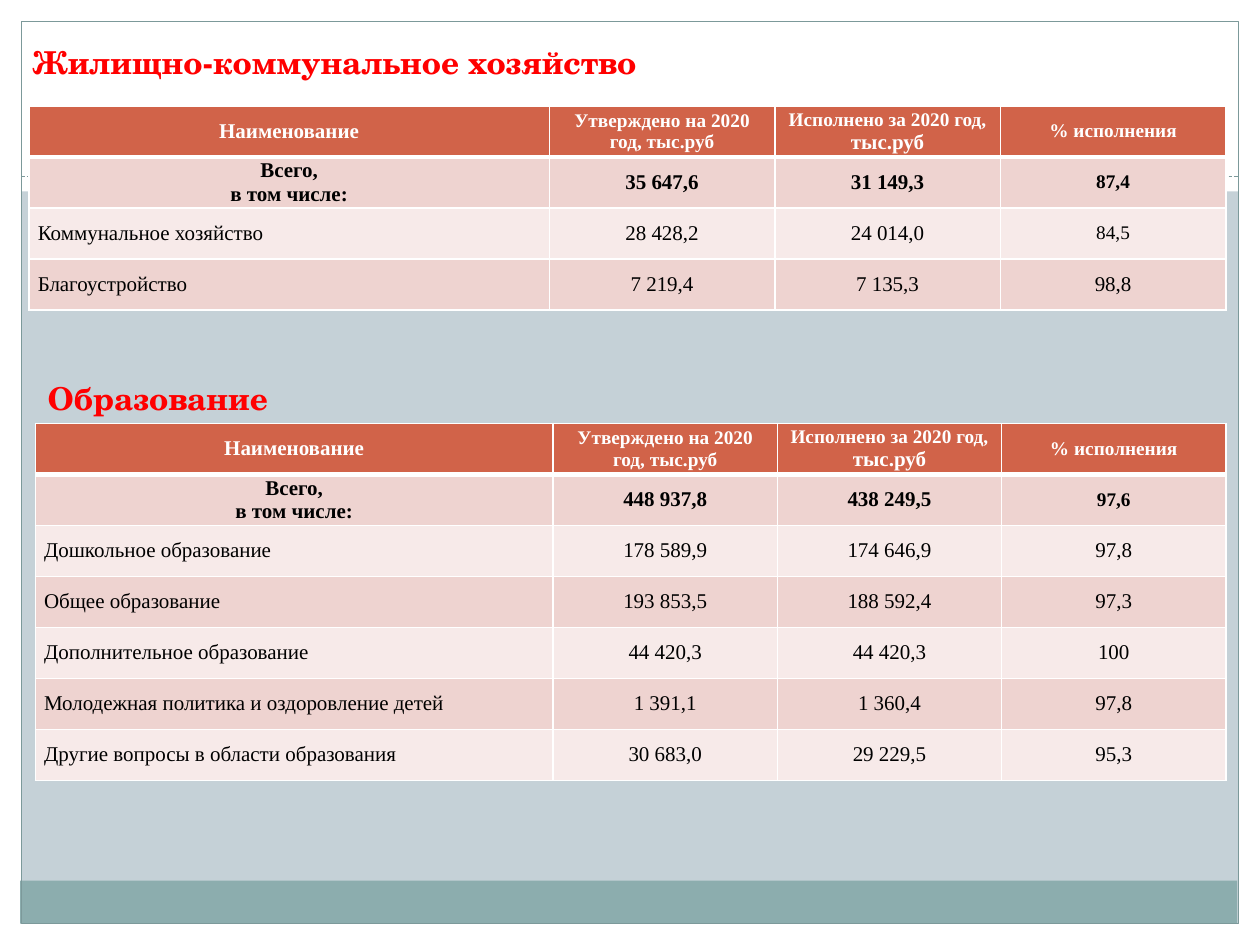
from lxml import etree
from pptx import Presentation
from pptx.dml.color import RGBColor
from pptx.enum.dml import MSO_LINE
from pptx.enum.shapes import MSO_CONNECTOR, MSO_SHAPE
from pptx.enum.text import MSO_ANCHOR, MSO_AUTO_SIZE, PP_ALIGN
from pptx.oxml.ns import qn
from pptx.util import Inches, Pt

RECT = MSO_SHAPE.RECTANGLE
CENTER, JUSTIFY = PP_ALIGN.CENTER, PP_ALIGN.JUSTIFY
MIDDLE = MSO_ANCHOR.MIDDLE

WHITE, BLACK, RED = "FFFFFF", "000000", "FF0000"
BACKGROUND, FOOTER, FRAME = "C5D1D7", "8CADAE", "7C999A"
HEADER_FILL, BAND_FILLS = "D16349", ("EED3D0", "F7EAE9")
TITLE_FONT, TABLE_FONT = "TeX Gyre Schola", "Times New Roman"
ROW_HEIGHT = 0.405

BLOCKS = [  # left, top, width, height, fill
    (0, 7.33, 10, 0.17, WHITE),
    (0, 0, 10, 1.52, WHITE),
    (0, 0, 0.17, 7.5, WHITE),
    (9.83, 0, 0.17, 7.5, WHITE),
    (0.16, 6.99, 9.66, 0.34, FOOTER),
]

# A cell is a text, or a list of (text, size) runs where sizes differ from 12 pt.
HEADER = [
    "Наименование",
    [("Утверждено на 2020 год, тыс.руб", 11)],
    [("Исполнено за 2020 год, ", 11), ("тыс.руб", 12)],
    [("% исполнения", 11)],
]
TOTAL = "Всего,\nв том числе:"

SECTIONS = [
    {
        "title": "Жилищно-коммунальное хозяйство",
        "title_box": (0.16, 0.29, 5.15, 0.4),
        "table_at": (0.23, 0.84),
        "columns": (4.13, 1.79, 1.79, 1.79),
        "rows": [
            (TOTAL, "35 647,6", "31 149,3", [("87,4", 11)]),
            ("Коммунальное хозяйство", "28 428,2", "24 014,0", [("84,5", 11)]),
            ("Благоустройство", "7 219,4", "7 135,3", "98,8"),
        ],
    },
    {
        "title": "Образование",
        "title_box": (0.28, 2.96, 1.99, 0.4),
        "table_at": (0.28, 3.36),
        "columns": (4.11, 1.78, 1.78, 1.78),
        "rows": [
            (TOTAL, "448 937,8", "438 249,5", [("97,6", 11)]),
            ("Дошкольное образование", "178 589,9", "174 646,9", "97,8"),
            ("Общее образование", "193 853,5", "188 592,4", "97,3"),
            ("Дополнительное образование", "44 420,3", "44 420,3", "100"),
            ("Молодежная политика и оздоровление детей", "1 391,1", "1 360,4", "97,8"),
            ("Другие вопросы в области образования", "30 683,0", "29 229,5", "95,3"),
        ],
    },
]


def rgb(color):
    return RGBColor.from_string(color)


def write(tf, content, size=12, font=TABLE_FONT, color=BLACK, bold=False, align=None):
    """Fill a text frame with a text (one paragraph a line) or a list of sized runs."""
    if isinstance(content, str):
        paragraphs = [[(line, size)] for line in content.split("\n")]
    else:
        paragraphs = [content]
    for i, runs in enumerate(paragraphs):
        p = tf.add_paragraph() if i else tf.paragraphs[0]
        p.alignment = align
        for text, run_size in runs:
            r = p.add_run()
            r.text = text
            r.font.name, r.font.size, r.font.bold = font, Pt(run_size), bold
            r.font.color.rgb = rgb(color)


def add_block(s, left, top, width, height, fill=None, line=None):
    sp = s.shapes.add_shape(RECT, *map(Inches, (left, top, width, height)))
    sp.shadow.inherit = False
    if fill:
        sp.fill.solid()
        sp.fill.fore_color.rgb = rgb(fill)
    else:
        sp.fill.background()
    if line:
        sp.line.color.rgb = rgb(line)
        sp.line.width = Pt(0.75)
    else:
        sp.line.fill.background()


def add_dashed_line(s, x1, y1, x2, y2):
    line = s.shapes.add_connector(MSO_CONNECTOR.STRAIGHT, *map(Inches, (x1, y1, x2, y2)))
    line.line.color.rgb = rgb(FRAME)
    line.line.width = Pt(0.75)
    line.line.dash_style = MSO_LINE.SQUARE_DOT
    etree.SubElement(line._element.spPr, qn("a:effectLst"))


def set_borders(cell, top=1, bottom=1):
    tc_pr = cell._tc.get_or_add_tcPr()
    widths = {"a:lnL": 1, "a:lnR": 1, "a:lnT": top, "a:lnB": bottom}
    for i, (tag, width) in enumerate(widths.items()):
        ln = etree.Element(qn(tag), w=str(Pt(width)))
        fill = etree.SubElement(ln, qn("a:solidFill"))
        etree.SubElement(fill, qn("a:srgbClr"), val=WHITE)
        tc_pr.insert(i, ln)


def add_budget_table(s, table_at, columns, rows):
    rows = [HEADER, *rows]
    size = sum(columns), ROW_HEIGHT * len(rows)
    frame = s.shapes.add_table(len(rows), len(columns), *map(Inches, (*table_at, *size)))
    table = frame.table
    for column, width in zip(table.columns, columns):
        column.width = Inches(width)
    for i, row in enumerate(rows):
        table.rows[i].height = Inches(ROW_HEIGHT)
        for j, content in enumerate(row):
            cell = table.cell(i, j)
            cell.vertical_anchor = MIDDLE
            cell.margin_left = cell.margin_right = Inches(0.07)
            cell.margin_top = cell.margin_bottom = 0
            cell.fill.solid()
            cell.fill.fore_color.rgb = rgb(BAND_FILLS[(i - 1) % 2] if i else HEADER_FILL)
            set_borders(cell, top=3 if i == 1 else 1, bottom=3 if i == 0 else 1)
            write(cell.text_frame, content, color=BLACK if i else WHITE, bold=i < 2,
                  align=JUSTIFY if i > 1 and j == 0 else CENTER)


def main():
    prs = Presentation()
    prs.slide_width, prs.slide_height = Inches(10), Inches(7.5)
    s = prs.slides.add_slide(prs.slide_layouts[6])
    s.background.fill.solid()
    s.background.fill.fore_color.rgb = rgb(BACKGROUND)

    for block in BLOCKS:
        add_block(s, *block)
    add_block(s, 0.17, 0.17, 9.66, 7.16, line=FRAME)
    add_dashed_line(s, 0.17, 1.4, 9.83, 1.4)

    for section in SECTIONS:
        tf = s.shapes.add_textbox(*map(Inches, section["title_box"])).text_frame
        tf.word_wrap = False
        tf.auto_size = MSO_AUTO_SIZE.SHAPE_TO_FIT_TEXT
        write(tf, section["title"], size=18, font=TITLE_FONT, color=RED, bold=True)
    for section in SECTIONS:
        add_budget_table(s, section["table_at"], section["columns"], section["rows"])

    prs.save("out.pptx")


if __name__ == "__main__":
    main()
